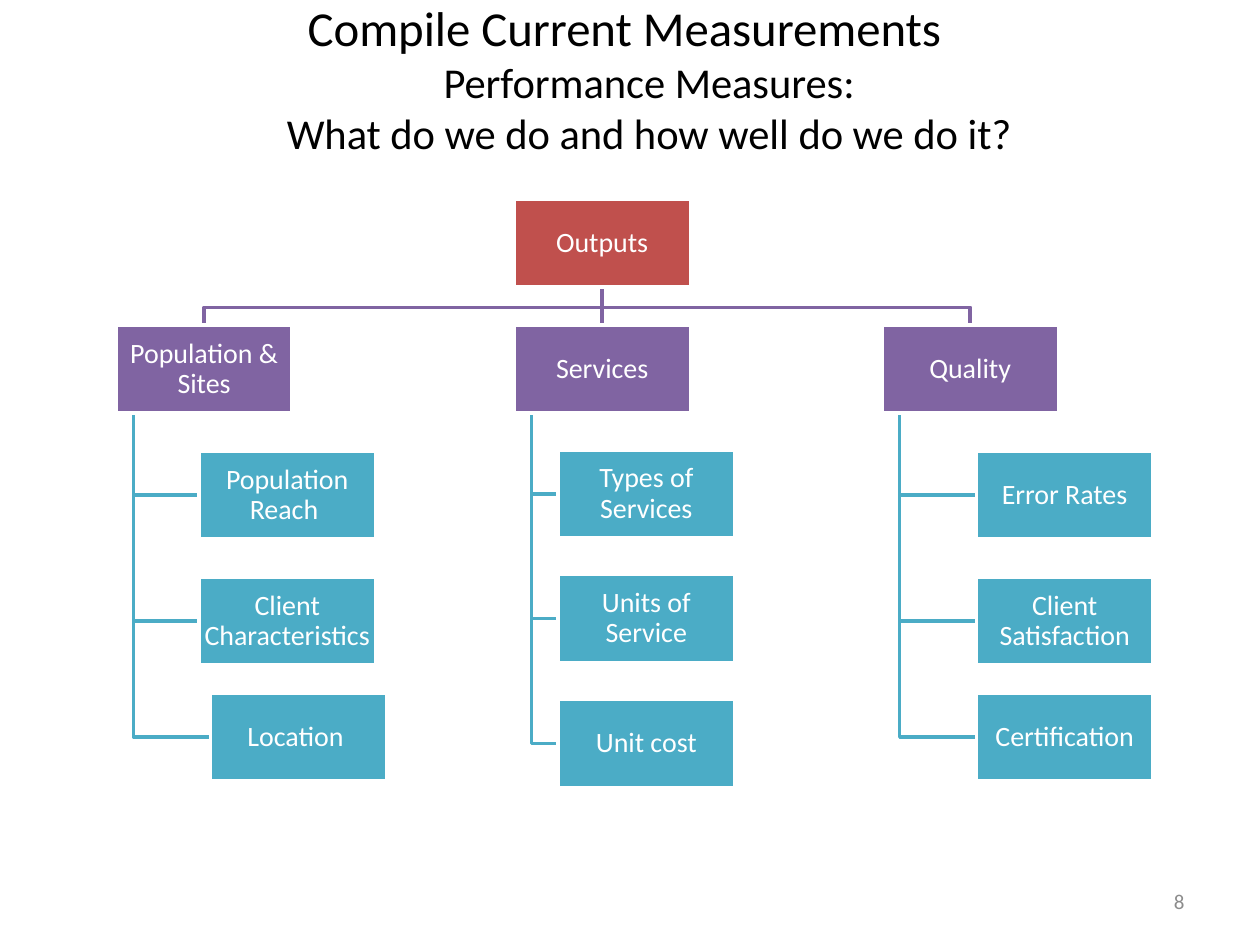
import dataclasses

import pptx
import pptx.dml.color
import pptx.enum.shapes
import pptx.enum.text
import pptx.util

Inches = pptx.util.Inches
Pt = pptx.util.Pt
Align = pptx.enum.text.PP_ALIGN
Anchor = pptx.enum.text.MSO_ANCHOR


@dataclasses.dataclass
class Theme:
    font: str = "Calibri"
    ink: str = "000000"
    pale: str = "FFFFFF"
    grey: str = "8C8C8C"
    root: str = "C0504D"
    group: str = "8064A2"
    leaf: str = "4BACC6"
    head: float = 27.9
    sub: float = 24.3
    label: int = 16
    small: int = 12
    line: int = 2


class Board:
    def __init__(self, slide, theme):
        self.slide = slide
        self.theme = theme

    def color(self, code):
        return pptx.dml.color.RGBColor.from_string(code)

    def style(self, part, size, code):
        for run in part.runs:
            run.font.name = self.theme.font
            run.font.size = Pt(size)
            run.font.color.rgb = self.color(code)

    def text(self, x, y, wide, high, words, size, code, align):
        box = self.slide.shapes.add_textbox(
            Inches(x), Inches(y), Inches(wide), Inches(high))
        frame = box.text_frame
        frame.word_wrap = True
        frame.vertical_anchor = Anchor.MIDDLE
        frame.text = words
        part = frame.paragraphs[0]
        part.alignment = align
        self.style(part, size, code)
        return frame

    def title(self, first, *rest):
        look = self.theme
        frame = self.text(0.5, 0.3, 9, 1.25, "\v".join((first,) + rest),
                          look.sub, look.ink, Align.CENTER)
        # The block sits high in its box
        frame.margin_top = 0
        frame.margin_bottom = Inches(0.61)
        part = frame.paragraphs[0]
        part.runs[0].font.size = Pt(look.head)
        # Hanging indent
        props = part._p.get_or_add_pPr()
        props.set("marL", str(Inches(0.38)))
        props.set("indent", str(-Inches(0.38)))

    def box(self, x, y, words, code):
        shape = self.slide.shapes.add_shape(
            pptx.enum.shapes.MSO_SHAPE.RECTANGLE,
            Inches(x), Inches(y), Inches(WIDE), Inches(HIGH))
        shape.shadow.inherit = False
        shape.fill.solid()
        shape.fill.fore_color.rgb = self.color(code)
        shape.line.color.rgb = self.color(self.theme.pale)
        shape.line.width = Pt(self.theme.line)
        frame = shape.text_frame
        frame.word_wrap = True
        frame.vertical_anchor = Anchor.MIDDLE
        frame.margin_left = frame.margin_right = Inches(0.01)
        frame.margin_top = frame.margin_bottom = Inches(0.01)
        frame.text = words
        part = frame.paragraphs[0]
        part.alignment = Align.CENTER
        part.line_spacing = 0.9
        self.style(part, self.theme.label, self.theme.pale)

    def link(self, code, *spots):
        spots = [(Inches(x), Inches(y)) for x, y in spots]
        pen = self.slide.shapes.build_freeform(*spots[0])
        pen.add_line_segments(spots[1:], close=False)
        shape = pen.convert_to_shape()
        shape.shadow.inherit = False
        shape.fill.background()
        shape.line.color.rgb = self.color(code)
        shape.line.width = Pt(self.theme.line)


# Chart layout
WIDE, HIGH = 1.4, 0.7
ROOT = (4.08, 1.58)
ROW = 2.58
BUS = 2.44
STEM = 0.14

# Group name, left edge, then leaves with their left and top edges
GROUPS = [
    ("Population & Sites", 0.92, [("Population Reach ", 1.58, 3.58),
                                  ("Client Characteristics", 1.58, 4.58),
                                  ("Location ", 1.67, 5.5)]),
    ("Services", 4.08, [("Types of Services", 4.43, 3.57),
                        ("Units of Service", 4.43, 4.56),
                        ("Unit cost", 4.43, 5.55)]),
    ("Quality", 7, [("Error Rates", 7.75, 3.58),
                    ("Client Satisfaction", 7.75, 4.58),
                    ("Certification", 7.75, 5.5)]),
]


def main():
    deck = pptx.Presentation()
    deck.slide_width = Inches(10)
    deck.slide_height = Inches(7.5)
    theme = Theme()
    board = Board(deck.slides.add_slide(deck.slide_layouts[6]), theme)

    # Title and page number
    board.title("Compile Current Measurements ", "Performance Measures: ",
                "What do we do and how well do we do it? ")
    board.text(7.17, 6.95, 2.33, 0.4, "8", theme.small, theme.grey,
               Align.RIGHT)

    # Links lie behind the boxes
    mid = ROOT[0] + WIDE / 2
    for _, left, leaves in reversed(GROUPS):
        stem = left + STEM
        for _, x, y in reversed(leaves):
            turn = y + HIGH / 2
            board.link(theme.leaf, (stem, ROW + HIGH), (stem, turn), (x, turn))
        end = left + WIDE / 2
        board.link(theme.group, (mid, ROOT[1] + HIGH), (mid, BUS),
                   (end, BUS), (end, ROW))

    # Boxes
    board.box(*ROOT, "Outputs", theme.root)
    for name, left, leaves in GROUPS:
        board.box(left, ROW, name, theme.group)
        for words, x, y in leaves:
            board.box(x, y, words, theme.leaf)

    deck.save("out.pptx")


if __name__ == "__main__":
    main()
